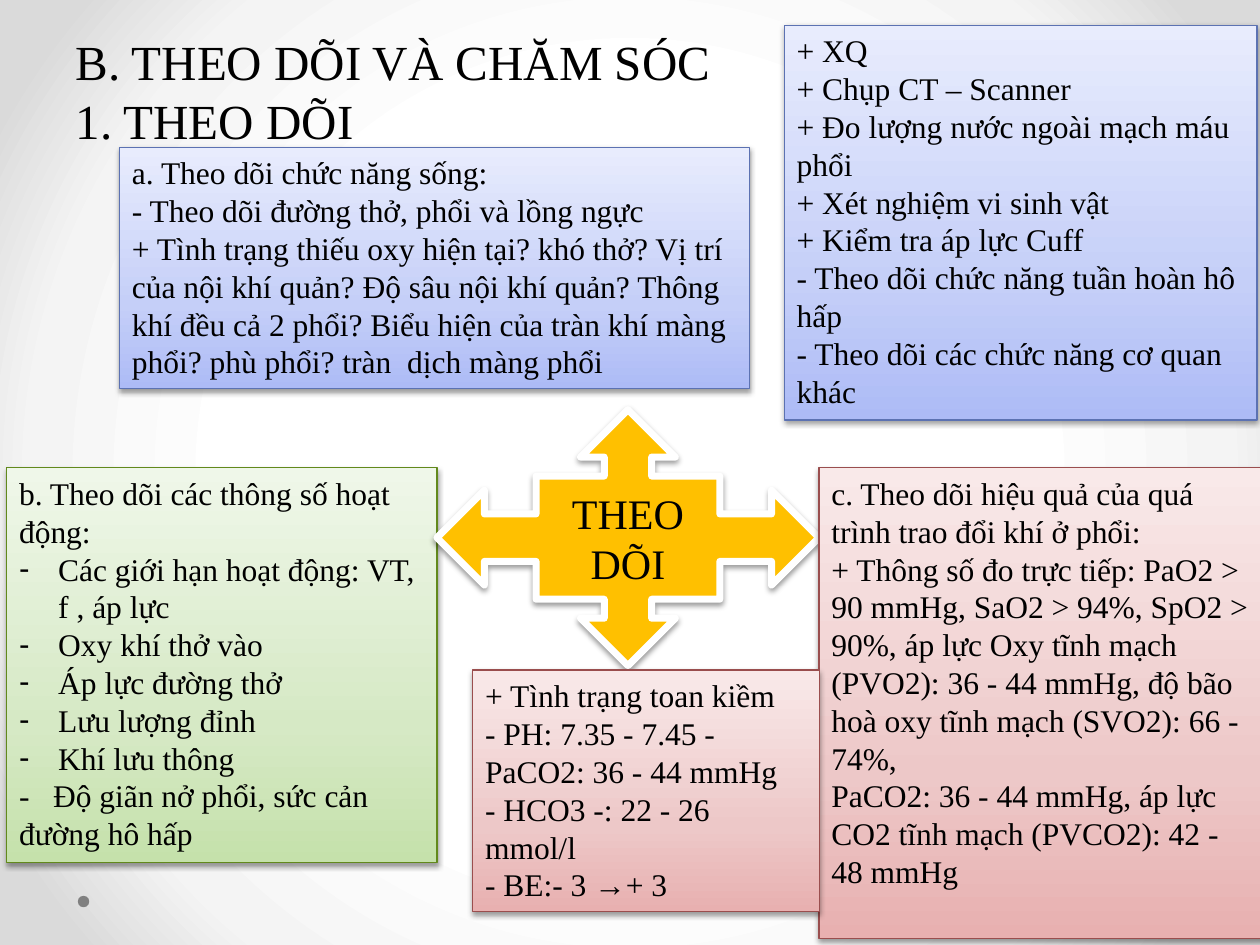
"""Build the monitoring slide: four-way arrow, five text panels and a title."""
import dataclasses
import typing

import lxml.etree
import pptx
import pptx.dml.color
import pptx.enum.shapes
import pptx.enum.text
import pptx.oxml
import pptx.oxml.ns
import pptx.util

Cm = pptx.util.Cm
Pt = pptx.util.Pt
Stops = tuple[tuple[int, str], ...]

FONT = "Times New Roman"
UPWARD = '<a:lin ang="16200000" scaled="0"/>'
RADIAL = '<a:path path="circle"><a:fillToRect l="50000" t="50000" r="50000" b="50000"/></a:path>'
BACKDROP = ((50, "FFFFFF"), (76, "F4F4F4"), (92, "DADADA"))


@dataclasses.dataclass(frozen=True)
class Theme:
    line: str
    stops: Stops


@dataclasses.dataclass(frozen=True)
class Panel:
    left: float
    top: float
    width: float
    height: float
    theme: Theme
    paragraphs: tuple[str, ...]
    dashed: range = range(0)


BLUE = Theme("5C72B2", ((0, "ADBBF6"), (35, "C5CFF8"), (100, "E8ECFD")))
GREEN = Theme("62891C", ((0, "C5E1AB"), (35, "D6E9C5"), (100, "EFF7E9")))
RED = Theme("9A4E4E", ((0, "E8B0B0"), (35, "EDC8C8"), (100, "F9E9E9")))

SETTINGS = Panel(0.13, 9.43, 8.68, 7.96, GREEN, (
    "b. Theo dõi các thông số hoạt động:",
    "Các giới hạn hoạt động: VT, f , áp lực",
    "Oxy khí thở vào",
    "Áp lực đường thở",
    "Lưu lượng đỉnh",
    "Khí lưu thông",
    "-   Độ giãn nở phổi, sức cản đường hô hấp",
), range(1, 6))

PANELS = (
    Panel(15.81, 0.51, 9.53, 7.96, BLUE, (
        "+ XQ",
        "+ Chụp CT – Scanner",
        "+ Đo lượng nước ngoài mạch máu phổi",
        "+ Xét nghiệm vi sinh vật",
        "+ Kiểm tra áp lực Cuff",
        "- Theo dõi chức năng tuần hoàn hô hấp",
        "- Theo dõi các chức năng cơ quan khác",
    )),
    Panel(16.51, 9.43, 8.97, 9.49, RED, (
        "c. Theo dõi hiệu quả của quá trình trao đổi khí ở phổi:",
        "+ Thông số đo trực tiếp: PaO2 > 90 mmHg, SaO2 > 94%, SpO2 > 90%, "
        "áp lực Oxy tĩnh mạch (PVO2): 36 - 44 mmHg, độ bão hoà oxy tĩnh mạch "
        "(SVO2): 66 - 74%,\vPaCO2: 36 - 44 mmHg, áp lực CO2 tĩnh mạch "
        "(PVCO2): 42 - 48 mmHg",
    )),
    Panel(9.53, 13.51, 6.99, 4.87, RED, (
        "+ Tình trạng toan kiềm\v- PH: 7.35 - 7.45 - PaCO2: 36 - 44 mmHg\v"
        "- HCO3 -: 22 - 26 mmol/l\v- BE:- 3 →+ 3",
    )),
    Panel(2.41, 2.97, 12.7, 4.87, BLUE, (
        "a. Theo dõi chức năng sống:",
        "- Theo dõi đường thở, phổi và lồng ngực\v"
        "+ Tình trạng thiếu oxy hiện tại? khó thở? Vị trí của nội khí quản? "
        "Độ sâu nội khí quản? Thông khí đều cả 2 phổi? Biểu hiện của tràn khí "
        "màng phổi? phù phổi? tràn  dịch màng phổi",
    )),
)


def color(value: str) -> pptx.dml.color.RGBColor:
    """Turn a hex string into a colour."""
    return pptx.dml.color.RGBColor.from_string(value)


def drawing_xml(tag: str, attributes: str, content: str) -> typing.Any:
    """Parse one DrawingML element."""
    namespace = pptx.oxml.ns.nsdecls("a")
    return pptx.oxml.parse_xml(f"<a:{tag} {namespace} {attributes}>{content}</a:{tag}>")


def set_gradient(fill: typing.Any, holder: typing.Any, stops: Stops, direction: str) -> None:
    """Give the holder element a gradient with these stops."""
    fill.gradient()
    old = holder.find(pptx.oxml.ns.qn("a:gradFill"))
    marks = "".join(
        f'<a:gs pos="{place * 1000}"><a:srgbClr val="{value}"/></a:gs>' for place, value in stops
    )
    content = f"<a:gsLst>{marks}</a:gsLst>{direction}"
    holder.replace(old, drawing_xml("gradFill", 'rotWithShape="1"', content))


def set_outline(shape: typing.Any, line: str, width: float) -> None:
    """Set the outline and a soft shadow below the shape."""
    shape.line.color.rgb = color(line)
    shape.line.width = Pt(width)
    shape.shadow.inherit = False
    effects = shape.element.spPr.find(pptx.oxml.ns.qn("a:effectLst"))
    effects.append(drawing_xml(
        "outerShdw", 'blurRad="40000" dist="20000" dir="5400000" rotWithShape="0"',
        '<a:srgbClr val="000000"><a:alpha val="38000"/></a:srgbClr>',
    ))


def place(shape: typing.Any, left: float, top: float, width: float, height: float) -> None:
    """Move and size a shape, in centimetres."""
    shape.left, shape.top, shape.width, shape.height = map(Cm, (left, top, width, height))


def write(shape: typing.Any, paragraphs: tuple[str, ...], size: int,
          align: typing.Any = pptx.enum.text.PP_ALIGN.LEFT,
          anchor: typing.Any = pptx.enum.text.MSO_ANCHOR.TOP,
          dashed: range = range(0)) -> None:
    """Fill a shape with black text, with dash bullets where asked."""
    frame = shape.text_frame
    frame.text = "\n".join(paragraphs)
    frame.word_wrap = True
    frame.auto_size = pptx.enum.text.MSO_AUTO_SIZE.NONE
    frame.vertical_anchor = anchor
    for index, para in enumerate(frame.paragraphs):
        para.alignment = align
        para.space_before = Pt(0)
        para.font.name = FONT
        para.font.size = Pt(size)
        para.font.color.rgb = color("000000")
        hanging = Cm(0.79) if index in dashed else 0
        properties = para._p.get_or_add_pPr()
        properties.set("marL", str(hanging))
        properties.set("indent", str(-hanging))
        bullet = drawing_xml("buChar", 'char="-"', "") if hanging else drawing_xml("buNone", "", "")
        properties.find(pptx.oxml.ns.qn("a:defRPr")).addprevious(bullet)


def draw_panel(shape: typing.Any, panel: Panel) -> None:
    """Format a shape as a shaded text panel."""
    place(shape, panel.left, panel.top, panel.width, panel.height)
    set_gradient(shape.fill, shape.element.spPr, panel.theme.stops, UPWARD)
    set_outline(shape, panel.theme.line, 0.75)
    write(shape, panel.paragraphs, 18, dashed=panel.dashed)


def add_shape(page: typing.Any, kind: str, *bounds: float) -> typing.Any:
    """Add a preset shape with bounds in centimetres."""
    return page.shapes.add_shape(pptx.enum.shapes.MSO_SHAPE[kind], *map(Cm, bounds))


def main() -> None:
    """Build and save the deck."""
    deck = pptx.Presentation()
    deck.slide_width, deck.slide_height = Cm(25.4), Cm(19.05)
    page = deck.slides.add_slide(deck.slide_layouts[1])
    fill = page.background.fill
    set_gradient(fill, page.element.xpath(".//p:bgPr")[0], BACKDROP, RADIAL)

    dot = add_shape(page, "OVAL", 1.57, 18.06, 0.23, 0.23)
    dot.shadow.inherit = False
    dot.fill.solid()
    dot.fill.fore_color.rgb = color("808080")
    dot.line.fill.background()

    arrows = add_shape(page, "QUAD_ARROW_CALLOUT", 8.81, 8.26, 7.7, 5.16)
    arrows.fill.solid()
    arrows.fill.fore_color.rgb = color("FFC000")
    set_outline(arrows, "FFFFFF", 4)
    write(arrows, ("THEO DÕI",), 24, pptx.enum.text.PP_ALIGN.CENTER,
          pptx.enum.text.MSO_ANCHOR.MIDDLE)

    draw_panel(page.placeholders[1], SETTINGS)
    for panel in PANELS:
        draw_panel(add_shape(page, "RECTANGLE", 0, 0, 1, 1), panel)

    title = page.shapes.title
    place(title, 1.27, 0.51, 14.55, 2.64)
    write(title, ("B. THEO DÕI VÀ CHĂM SÓC", "1. THEO DÕI"), 28)
    deck.save("out.pptx")


if __name__ == "__main__":
    main()
